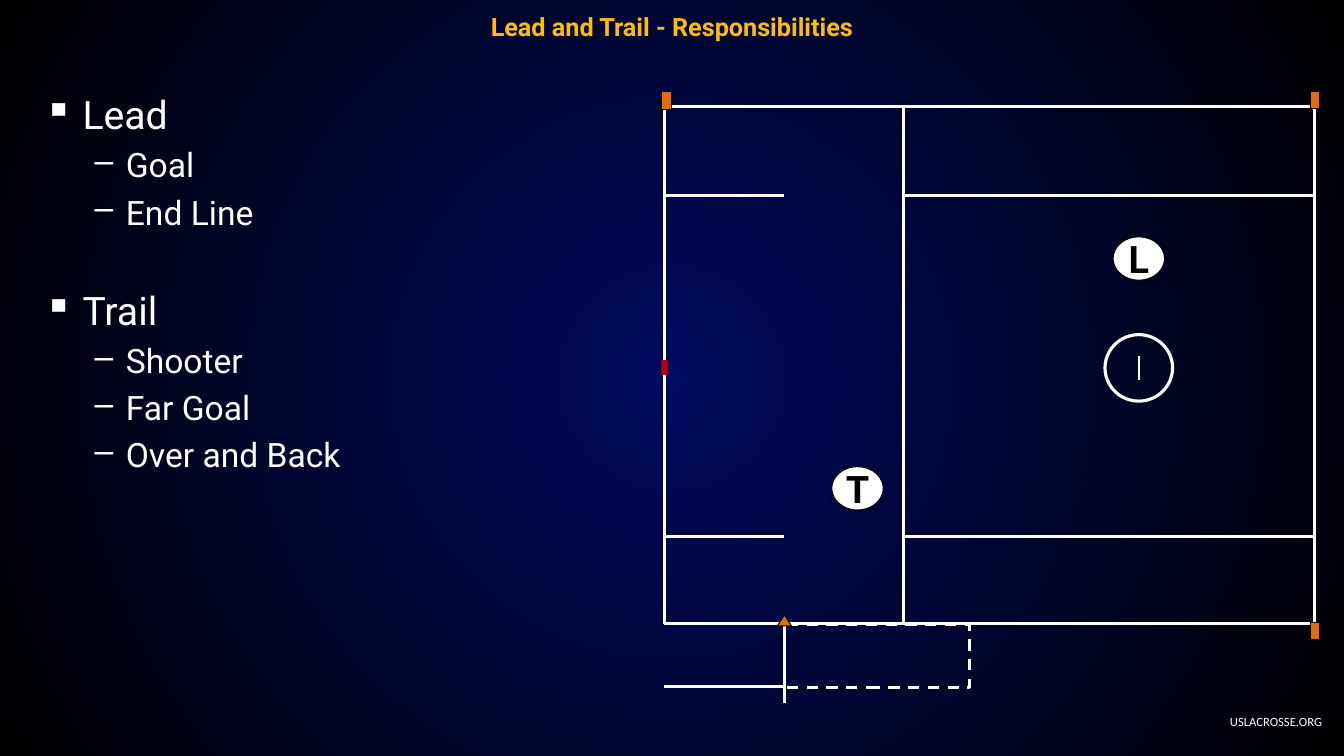
from lxml.etree import SubElement
from pptx import Presentation
from pptx.dml.color import RGBColor
from pptx.enum.dml import MSO_LINE
from pptx.enum.shapes import MSO_CONNECTOR, MSO_SHAPE
from pptx.enum.text import MSO_ANCHOR, PP_ALIGN
from pptx.oxml.ns import qn
from pptx.util import Inches, Pt

COLORS = {
    "navy": "000A5E",
    "black": "000000",
    "white": "FFFFFF",
    "gold": "FEBC11",
    "orange": "E36C09",
    "red": "C00000",
}
LEFT, BOX_EDGE, MIDLINE, RIGHT = 6.59, 7.78, 8.96, 13.04
TOP, UPPER, LOWER, BOTTOM = 1.06, 1.94, 5.32, 6.19
BENCH = 6.81

presentation = Presentation()
presentation.slide_width = Inches(13.33)
presentation.slide_height = Inches(7.5)
slide = presentation.slides.add_slide(presentation.slide_layouts[6])


def style_shape(shape, fill, line, width):
    shape.shadow.inherit = False
    if fill:
        shape.fill.solid()
        shape.fill.fore_color.rgb = RGBColor.from_string(COLORS[fill])
    else:
        shape.fill.background()
    if line:
        shape.line.color.rgb = RGBColor.from_string(COLORS[line])
        shape.line.width = Pt(width)
    else:
        shape.line.fill.background()


def add_run(paragraph, text, size, color, bold=False, name="Roboto"):
    run = paragraph.add_run()
    run.text = text
    run.font.name = name
    run.font.size = Pt(size)
    run.font.bold = bold
    run.font.color.rgb = RGBColor.from_string(COLORS[color])


background = slide.background.fill
background.gradient()
for stop, color in zip(background.gradient_stops, ("navy", "black")):
    stop.color.rgb = RGBColor.from_string(COLORS[color])
gradient = slide.element.find(".//" + qn("a:gradFill"))
gradient.remove(gradient.find(qn("a:lin")))
circle = SubElement(gradient, qn("a:path"), path="circle")
SubElement(circle, qn("a:fillToRect"), l="50000", t="50000", r="50000", b="50000")

labels = [
    ("USLACROSSE.ORG", (12.08, 7.03, 1.13, 0.25), PP_ALIGN.RIGHT, 9, "white", False, "Calibri"),
    ("Lead and Trail - Responsibilities", (0, 0.05, 13.33, 0.42), PP_ALIGN.CENTER, 18, "gold", True, "Roboto"),
]
for text, place, alignment, size, color, bold, font_name in labels:
    label = slide.shapes.add_textbox(*map(Inches, place))
    label.text_frame.word_wrap = True
    label.text_frame.vertical_anchor = MSO_ANCHOR.MIDDLE
    paragraph = label.text_frame.paragraphs[0]
    paragraph.alignment = alignment
    add_run(paragraph, text, size, color, bold, font_name)

zones = [
    (LEFT, TOP, MIDLINE, BOTTOM),
    (MIDLINE, TOP, RIGHT, UPPER),
    (MIDLINE, UPPER, RIGHT, LOWER),
    (MIDLINE, LOWER, RIGHT, BOTTOM),
]
for left, top, right, bottom in zones:
    zone = slide.shapes.add_shape(
        MSO_SHAPE.RECTANGLE, Inches(left), Inches(top), Inches(right - left), Inches(bottom - top))
    style_shape(zone, None, "white", 2.25)

penalty_area = slide.shapes.add_shape(
    MSO_SHAPE.RECTANGLE, Inches(BOX_EDGE), Inches(6.2), Inches(1.84), Inches(0.62))
style_shape(penalty_area, None, "white", 2)
penalty_area.line.dash_style = MSO_LINE.DASH

crease = slide.shapes.add_shape(
    MSO_SHAPE.OVAL, Inches(10.96), Inches(3.32), Inches(0.67), Inches(0.66))
style_shape(crease, None, "white", 2.25)

field_lines = [
    (11.3, 3.77, 11.3, 3.53, 1.5),
    (BOX_EDGE, 6.97, BOX_EDGE, 6.21, 2.25),
]
field_lines += [(LEFT, y, BOX_EDGE, y, 2.25) for y in (UPPER, LOWER, BENCH)]
for *ends, width in field_lines:
    field_line = slide.shapes.add_connector(MSO_CONNECTOR.STRAIGHT, *map(Inches, ends))
    field_line.line.color.rgb = RGBColor.from_string(COLORS["white"])
    field_line.line.width = Pt(width)
    SubElement(field_line.element.spPr, qn("a:effectLst"))

markers = [
    (13, 0.91, 0.09, 0.17, "orange", "black"),
    (13, 6.18, 0.09, 0.17, "orange", "black"),
    (6.56, 0.91, 0.1, 0.18, "orange", "black"),
    (6.56, 3.57, 0.06, 0.15, "red", None),
]
for *place, fill, line in markers:
    marker = slide.shapes.add_shape(MSO_SHAPE.RECTANGLE, *map(Inches, place))
    style_shape(marker, fill, line, 0.75)

cone = slide.shapes.add_shape(
    MSO_SHAPE.ISOSCELES_TRIANGLE, Inches(7.71), Inches(6.1), Inches(0.14), Inches(0.11))
style_shape(cone, "orange", "black", 0.75)

duties = slide.shapes.add_textbox(Inches(0.34), Inches(0.85), Inches(5.89), Inches(5.73))
duties.text_frame.word_wrap = True
levels = [("▪", 0.38, -0.38, 28), ("–", 0.81, -0.31, 24)]
items = [
    ("Lead", 0, 0),
    ("Goal", 1, 4.8),
    ("End Line", 1, 4.8),
    ("Trail", 0, 39),
    ("Shooter", 1, 4.8),
    ("Far Goal", 1, 4.8),
    ("Over and Back", 1, 4.8),
]
for index, (text, level, space) in enumerate(items):
    bullet, margin, indent, size = levels[level]
    paragraph = duties.text_frame.add_paragraph() if index else duties.text_frame.paragraphs[0]
    properties = paragraph._p.get_or_add_pPr()
    properties.set("marL", str(Inches(margin)))
    properties.set("indent", str(Inches(indent)))
    bullet_color = SubElement(properties, qn("a:buClr"))
    SubElement(bullet_color, qn("a:srgbClr"), val=COLORS["white"])
    SubElement(properties, qn("a:buChar"), char=bullet)
    paragraph.level = level
    paragraph.space_before = Pt(space)
    add_run(paragraph, text, size, "white")

for letter, left, top in (("L", 11.04, 2.35), ("T", 8.25, 4.63)):
    official = slide.shapes.add_shape(
        MSO_SHAPE.OVAL, Inches(left), Inches(top), Inches(0.51), Inches(0.43))
    style_shape(official, "white", "black", 0.75)
    effects = official.element.spPr.find(qn("a:effectLst"))
    shadow = SubElement(effects, qn("a:outerShdw"), blurRad=str(Pt(5)), dist=str(Pt(2)), dir="5400000")
    shadow_color = SubElement(shadow, qn("a:srgbClr"), val=COLORS["black"])
    SubElement(shadow_color, qn("a:alpha"), val="20000")
    frame = official.text_frame
    frame.word_wrap = False
    frame.vertical_anchor = MSO_ANCHOR.MIDDLE
    frame.margin_left = frame.margin_right = Inches(0.07)
    frame.margin_top = frame.margin_bottom = Inches(0.07)
    paragraph = frame.paragraphs[0]
    paragraph.alignment = PP_ALIGN.CENTER
    add_run(paragraph, letter, 27, "black", True)

presentation.save("out.pptx")
